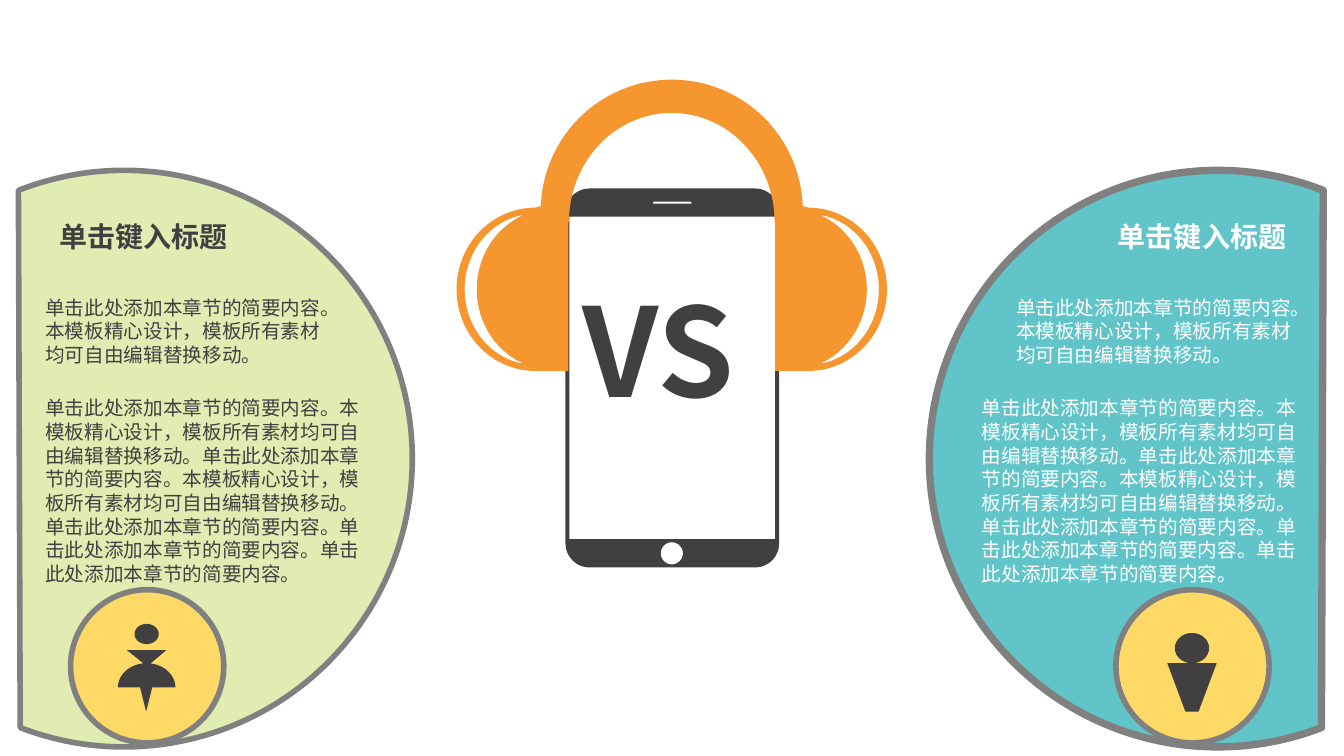
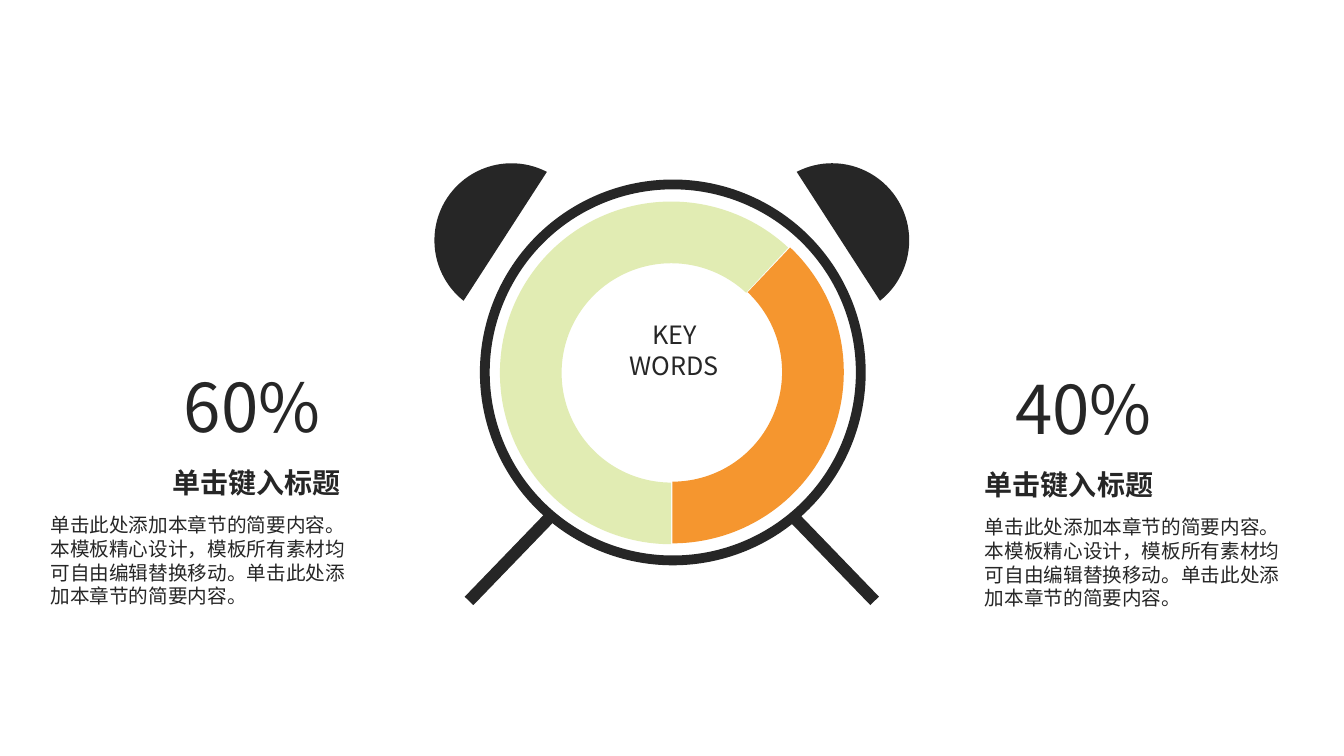
"""Build two comparison slides: a headphone phone and an alarm clock."""
from math import cos, radians, sin

from lxml import etree
from pptx import Presentation
from pptx.dml.color import RGBColor
from pptx.enum.shapes import MSO_SHAPE
from pptx.enum.text import MSO_ANCHOR, MSO_AUTO_SIZE, PP_ALIGN
from pptx.oxml.ns import qn
from pptx.util import Inches, Pt

CHORD, ELLIPSE = MSO_SHAPE.CHORD, MSO_SHAPE.OVAL
BLOCK_ARC, RECTANGLE = MSO_SHAPE.BLOCK_ARC, MSO_SHAPE.RECTANGLE
LEFT, CENTER = PP_ALIGN.LEFT, PP_ALIGN.CENTER
TOP, FIXED_SIZE = MSO_ANCHOR.TOP, MSO_AUTO_SIZE.NONE

COLUMNS, ROWS = 13.333, 7.5
CELL = Inches(1)
MIDDLE = 6.665
COMPARISON_LAYOUT = 4
DEGREE = 0.6
FONT = "Noto Sans CJK SC"
COLORS = {
    "white": "FFFFFF", "dark": "404040", "black": "262626", "gray": "808080",
    "teal": "60C4C9", "lime": "E1ECB3", "yellow": "FFD966", "orange": "F5962F",
}

HEADING = "单击键入标题"
SENTENCE = "单击此处添加本章节的简要内容。"
DESIGN = "本模板精心设计，模板所有素材均可自由编辑替换移动。"
SHORT = SENTENCE + DESIGN
LONG = SHORT * 2 + SENTENCE * 3


def color(name):
    """Return the named colour."""
    return RGBColor.from_string(COLORS[name])


def write(shape, text, size=14, ink="dark", bold=False, align=LEFT, pitch=None):
    """Put one formatted paragraph without bullet in a shape."""
    frame = shape.text_frame
    frame.word_wrap = True
    frame.auto_size = FIXED_SIZE
    frame.vertical_anchor = TOP
    frame.margin_left = frame.margin_right = 0
    frame.margin_top = frame.margin_bottom = 0
    paragraph = frame.paragraphs[0]
    paragraph.alignment = align
    paragraph.space_before = paragraph.space_after = Pt(0)
    paragraph.line_spacing = Pt(pitch) if pitch else 1.0
    properties = paragraph._p.get_or_add_pPr()
    properties.set("marL", "0")
    properties.set("indent", "0")
    etree.SubElement(properties, qn("a:buNone"))
    run = paragraph.add_run()
    run.text = text
    run.font.name = FONT
    run.font.size = Pt(size)
    run.font.bold = bold
    run.font.color.rgb = color(ink)
    east_asian = etree.SubElement(run._r.get_or_add_rPr(), qn("a:ea"))
    east_asian.set("typeface", FONT)


def arc(x, y, radius_x, radius_y, start=0, end=360, steps=48):
    """Return points along an elliptic arc, angles clockwise from the right."""
    angles = [radians(start + (end - start) * step / steps) for step in range(steps + 1)]
    return [(x + radius_x * cos(angle), y + radius_y * sin(angle)) for angle in angles]


def box(left, top, right, bottom):
    """Return the corners of a rectangle."""
    return [(left, top), (right, top), (right, bottom), (left, bottom)]


def rounded_box(left, top, right, bottom, radius):
    """Return the outline of a rectangle with round corners."""
    centers = box(left + radius, top + radius, right - radius, bottom - radius)
    return [point for index, (x, y) in enumerate(centers)
            for point in arc(x, y, radius, radius, 180 + 90 * index, 270 + 90 * index, 12)]


def mirror(points):
    """Reflect points across the middle of the slide."""
    return [(2 * MIDDLE - x, y) for x, y in points]


def mirror_angles(start, end):
    """Reflect a pair of arc angles across a vertical axis."""
    return (180 - end) % 360, (180 - start) % 360


class Deck:
    """Hold the presentation, its style and the current slide."""

    def __init__(self):
        """Start a widescreen presentation."""
        self.presentation = Presentation()
        self.presentation.slide_width = Inches(COLUMNS)
        self.presentation.slide_height = Inches(ROWS)
        self.slide = None

    def new_slide(self):
        """Add a slide and make it current."""
        layout = self.presentation.slide_layouts[COMPARISON_LAYOUT]
        self.slide = self.presentation.slides.add_slide(layout)

    def grid(self, *cells):
        """Turn grid cells into lengths."""
        return [round(cell * CELL) for cell in cells]

    def paint(self, shape, fill, line=None, width=0):
        """Give a shape its fill and outline without shadow."""
        shape.shadow.inherit = False
        shape.fill.solid()
        shape.fill.fore_color.rgb = color(fill)
        if line:
            shape.line.color.rgb = color(line)
            shape.line.width = Pt(width)
        else:
            shape.line.fill.background()

    def shape(self, kind, place, fill, line=None, width=0, angles=(), band=None, turn=0):
        """Draw a preset shape, with arc angles in degrees."""
        shape = self.slide.shapes.add_shape(kind, *self.grid(*place))
        for index, angle in enumerate(angles):
            shape.adjustments[index] = angle * DEGREE
        if band:
            shape.adjustments[2] = band
        shape.rotation = turn
        self.paint(shape, fill, line, width)

    def outline(self, contours, fill):
        """Draw closed contours as one shape; inner contours are holes."""
        contours = [[self.grid(*point) for point in contour] for contour in contours]
        builder = self.slide.shapes.build_freeform(*contours[0][0])
        for index, (start, *others) in enumerate(contours):
            if index:
                builder.move_to(*start)
            builder.add_line_segments(others, close=True)
        self.paint(builder.convert_to_shape(), fill)

    def placeholder(self, index, place, text, **style):
        """Move a placeholder to its place in front and fill it."""
        shape = self.slide.placeholders[index]
        shape.left, shape.top, shape.width, shape.height = self.grid(*place)
        shape.element.getparent().append(shape.element)
        write(shape, text, **style)

    def text(self, place, text, **style):
        """Add a text box."""
        write(self.slide.shapes.add_textbox(*self.grid(*place)), text, **style)

    def save(self):
        """Save the presentation."""
        self.presentation.save("out.pptx")


def draw_phone(deck):
    """Draw the phone wearing headphones."""
    deck.outline([
        rounded_box(5.61, 1.87, 7.73, 5.63, 0.24),
        box(5.65, 2.15, 7.69, 5.35),
        box(6.48, 2, 6.86, 2.02),
        arc(MIDDLE, 5.49, 0.11, 0.11),
    ], "dark")
    right_cup = arc(8.02, 2.87, 0.78, 0.81, -90, 90)
    inner_edge = [(7.69, 3.68), (7.69, 2.2)]
    headband = (
        arc(MIDDLE, 2.09, 1.3, 1.3, 182, 358) + right_cup + inner_edge
        + arc(MIDDLE, 2.2, 1.02, 1.08, 0, -180)
        + mirror(inner_edge[::-1]) + mirror(right_cup[::-1])
    )
    gap = (arc(8.02, 2.87, 0.7, 0.75, -78, 78)
           + arc(7.84, 2.87, 0.76, 0.8, 66, -66))
    deck.outline([headband, gap, mirror(gap)], "orange")


def draw_people(deck):
    """Draw the woman and the man on their badges."""
    for left in (0.7, 11.07):
        deck.shape(ELLIPSE, (left, 5.85, 1.52, 1.52), "yellow", "gray", 4)
    woman = ([(1.65, 6.45), (1.26, 6.45), (1.42, 6.58)]
             + arc(1.455, 6.82, 0.285, 0.24, 262, 180, 16)
             + [(1.39, 6.82), (1.45, 7.06), (1.51, 6.82)]
             + arc(1.455, 6.82, 0.285, 0.24, 0, -82, 16))
    deck.outline([woman, arc(1.455, 6.29, 0.12, 0.1)], "dark")
    man = [(11.58, 6.58), (12.07, 6.58), (11.89, 7.06), (11.76, 7.06)]
    deck.outline([man, arc(11.825, 6.43, 0.17, 0.15)], "dark")


def versus_slide(deck):
    """Build the slide that sets two sides against each other."""
    deck.new_slide()
    cut = (68.9, 291.48)
    deck.shape(CHORD, (9.22, 1.69, 5.72, 5.72), "teal", "gray", 5.25, cut)
    deck.shape(CHORD, (-1.63, 1.69, 5.72, 5.72), "lime", "gray", 4, mirror_angles(*cut))
    draw_phone(deck)
    draw_people(deck)
    deck.placeholder(0, (5.57, 2.72, 2.2, 1.8), "VS ", size=88, bold=True, align=CENTER)
    sides = ((1, 0.59, 0.45, 0.45, "dark"), (3, 11.09, 10.08, 9.74, "white"))
    for index, heading_left, short_left, long_left, ink in sides:
        deck.placeholder(index, (heading_left, 2.18, 2, 0.45), HEADING,
                         size=20, bold=True, ink=ink)
        deck.text((short_left, 2.93, 2.84, 0.75), SHORT, ink=ink, pitch=16.9)
        deck.placeholder(index + 1, (long_left, 3.93, 3.2, 1.9), LONG, ink=ink, pitch=16.9)


def clock_slide(deck):
    """Build the slide with shares on an alarm clock."""
    deck.new_slide()
    deck.shape(ELLIPSE, (4.81, 1.83, 3.73, 3.73), "white", "black", 7)
    bell = (128.43, 297.32)
    for left, angles in ((4.31, bell), (7.49, mirror_angles(*bell))):
        deck.shape(CHORD, (left, 1.62, 1.53, 1.53), "black", angles=angles)
    for left, turn in ((4.47, 314), (7.66, 46)):
        deck.shape(RECTANGLE, (left, 5.47, 1.2, 0.12), "black", turn=turn)
    deck.shape(BLOCK_ARC, (4.96, 2, 3.4, 3.4), "lime", angles=(90.06, 313.04), band=0.18)
    deck.shape(BLOCK_ARC, (4.97, 1.99, 3.4, 3.4), "orange",
               angles=(176.38, 313.04), band=0.18, turn=137)
    deck.placeholder(0, (6.14, 3.16, 1.1, 0.65), "KEY WORDS",
                     size=18, ink="black", align=CENTER, pitch=22)
    sides = ((1, "60%", 1.5, 1.71, 0.5, 0), (3, "40%", 9.75, 9.77, 9.77, 0.02))
    for index, share, share_left, heading_left, body_left, drop in sides:
        deck.text((share_left, 3.62 + drop, 2, 0.97), share,
                  size=48, ink="black", align=CENTER)
        deck.placeholder(index, (heading_left, 4.62 + drop, 2, 0.45), HEADING,
                         size=20, bold=True, ink="black")
        deck.placeholder(index + 1, (body_left, 5.09 + drop, 3.01, 0.95),
                         SHORT + SENTENCE, ink="black", pitch=16.9)


def main():
    """Build and save both slides."""
    deck = Deck()
    versus_slide(deck)
    clock_slide(deck)
    deck.save()


if __name__ == "__main__":
    main()
